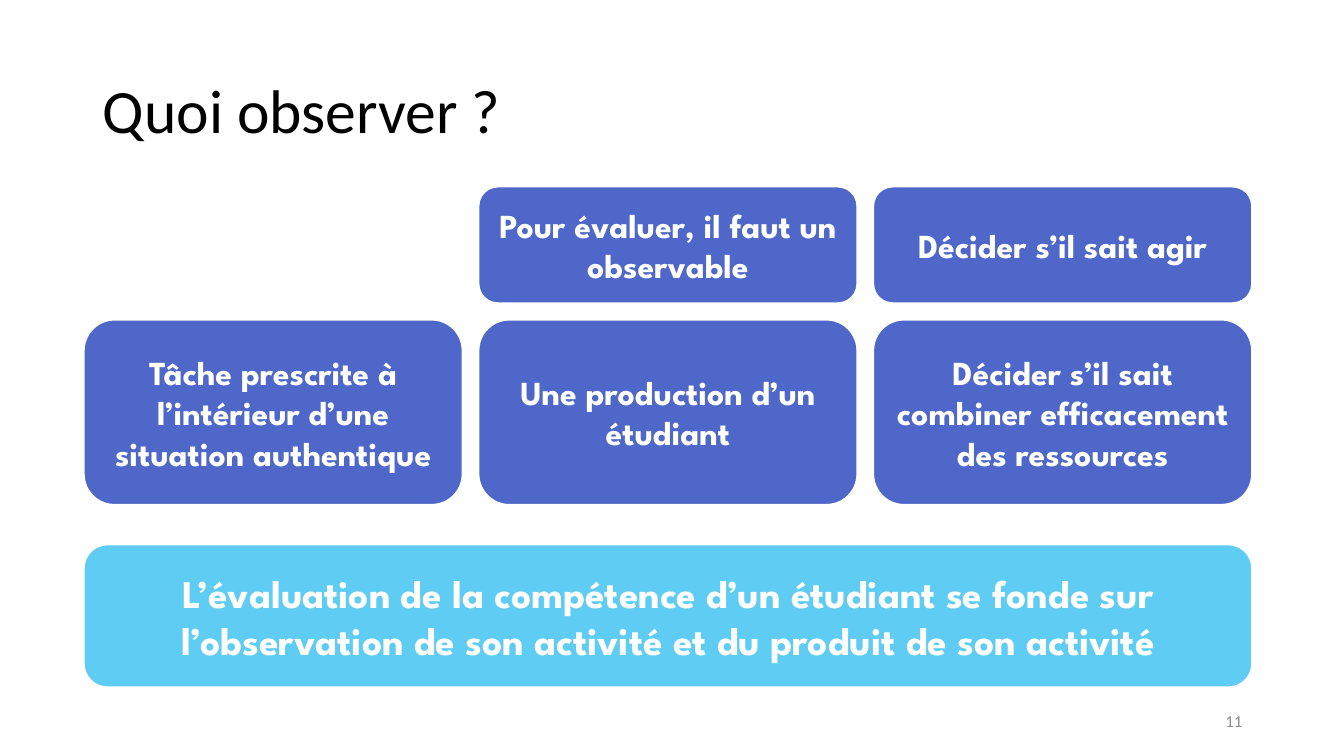
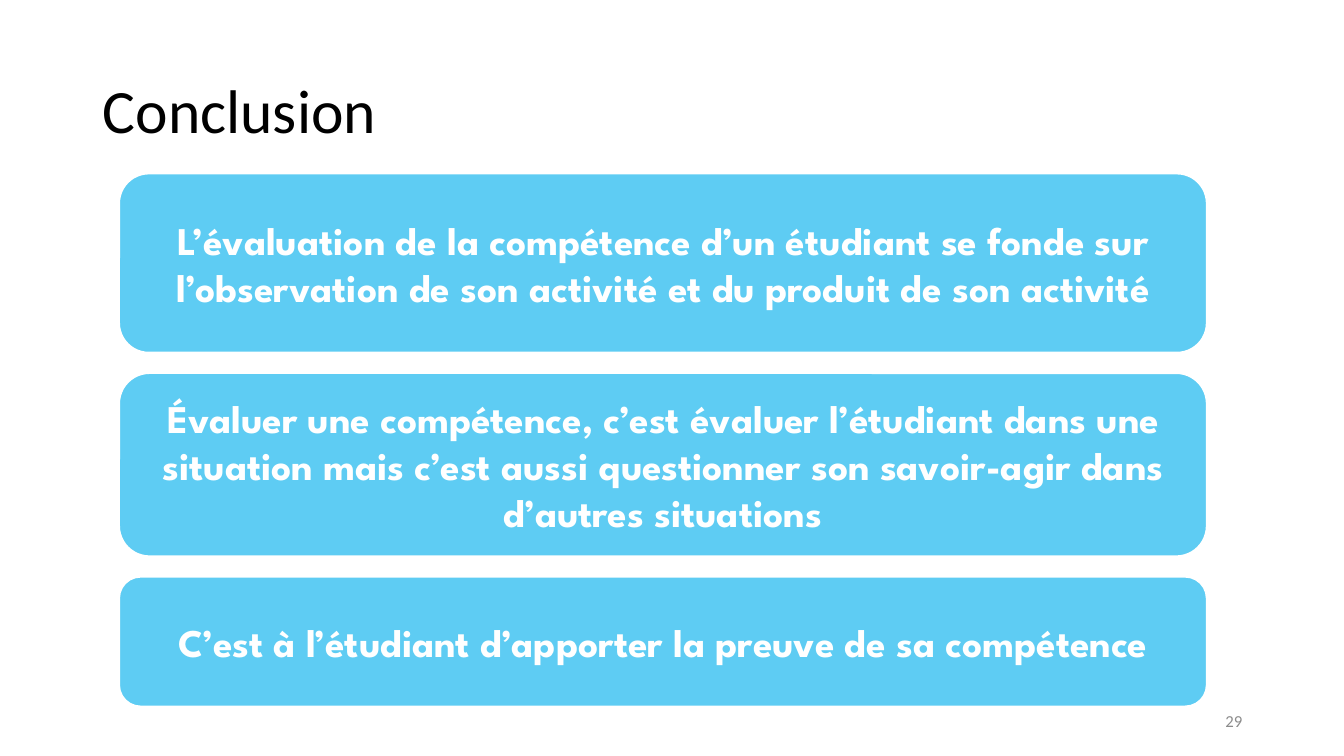
from pptx import Presentation
from pptx.dml.color import RGBColor
from pptx.enum.shapes import MSO_SHAPE
from pptx.enum.text import MSO_ANCHOR, PP_ALIGN
from pptx.util import Inches, Pt

COLORS = {
    "title": "000000",
    "number": "8C8C8C",
    "step": "4E67C8",
    "message": "5ECCF3",
    "white": "FFFFFF",
}
TITLE_FONT = "Calibri"
CARD_FONT = "League Spartan"
KEY_MESSAGE = (
    "L’évaluation de la compétence d’un étudiant se fonde sur "
    "l’observation de son activité et du produit de son activité"
)

prs = Presentation()
prs.slide_width = Inches(13.33)
prs.slide_height = Inches(7.5)


def write(shape, text, font_name, size, color, align, bold=False):
    frame = shape.text_frame
    frame.word_wrap = True
    frame.vertical_anchor = MSO_ANCHOR.MIDDLE
    paragraph = frame.paragraphs[0]
    paragraph.text = text
    paragraph.alignment = align
    paragraph.font.name = font_name
    paragraph.font.size = Pt(size)
    paragraph.font.bold = bold
    paragraph.font.color.rgb = RGBColor.from_string(COLORS[color])
    return paragraph


def add_card(slide, left, top, width, height, text, color, size):
    card = slide.shapes.add_shape(
        MSO_SHAPE.ROUNDED_RECTANGLE,
        Inches(left), Inches(top), Inches(width), Inches(height),
    )
    card.shadow.inherit = False
    card.fill.solid()
    card.fill.fore_color.rgb = RGBColor.from_string(COLORS[color])
    card.line.color.rgb = RGBColor.from_string(COLORS["white"])
    card.line.width = Pt(1.5)
    write(card, text, CARD_FONT, size, "white", PP_ALIGN.CENTER, bold=True)


slides = []
for heading, number in [("Quoi observer ?", "11"), ("Conclusion", "29")]:
    slide = prs.slides.add_slide(prs.slide_layouts[5])
    title = slide.shapes.title
    title.left, title.top = Inches(0.92), Inches(0.4)
    title.width, title.height = Inches(11.5), Inches(1.45)
    heading_line = write(title, heading, TITLE_FONT, 44, "title", PP_ALIGN.LEFT)
    heading_line.line_spacing = 0.9
    page_number = slide.shapes.add_textbox(
        Inches(9.42), Inches(6.95), Inches(3), Inches(0.4)
    )
    write(page_number, number, TITLE_FONT, 12, "number", PP_ALIGN.RIGHT)
    slides.append(slide)

observe, conclusion = slides

GRID_LEFT, GRID_WIDTH, STEP_WIDTH = 0.83, 11.59, 3.76
column_pitch = (GRID_WIDTH - STEP_WIDTH) / 2
step_rows = [
    (1.85, 1.16, [
        None,
        "Pour évaluer, il faut un observable",
        "Décider s’il sait agir",
    ]),
    (3.17, 1.84, [
        "Tâche prescrite à l’intérieur d’une situation authentique",
        "Une production d’un étudiant",
        "Décider s’il sait combiner efficacement des ressources",
    ]),
]
for top, height, steps in step_rows:
    for column, step in enumerate(steps):
        if step:
            left = GRID_LEFT + column * column_pitch
            add_card(observe, left, top, STEP_WIDTH, height, step, "step", 24)
add_card(observe, GRID_LEFT, 5.4, GRID_WIDTH, 1.42, KEY_MESSAGE, "message", 28)

messages = [
    (1.78, KEY_MESSAGE),
    (1.82, "Évaluer une compétence, c’est évaluer l’étudiant dans une situation "
           "mais c’est aussi questionner son savoir-agir dans d’autres situations"),
    (1.29, "C’est à l’étudiant d’apporter la preuve de sa compétence"),
]
MESSAGE_GAP = 0.2
top = 1.72
for height, message in messages:
    add_card(conclusion, 1.18, top, 10.79, height, message, "message", 28)
    top += height + MESSAGE_GAP

prs.save("out.pptx")
